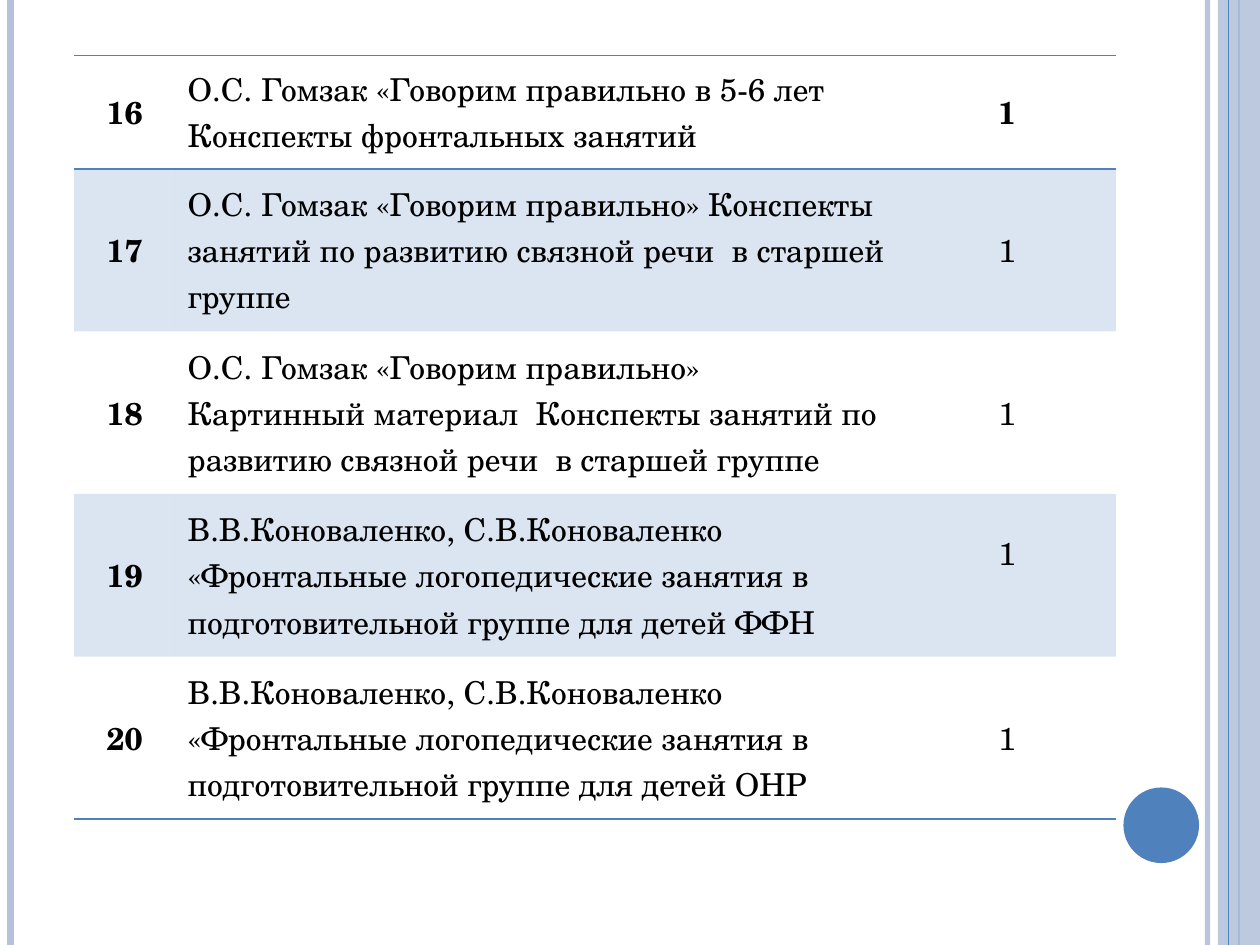
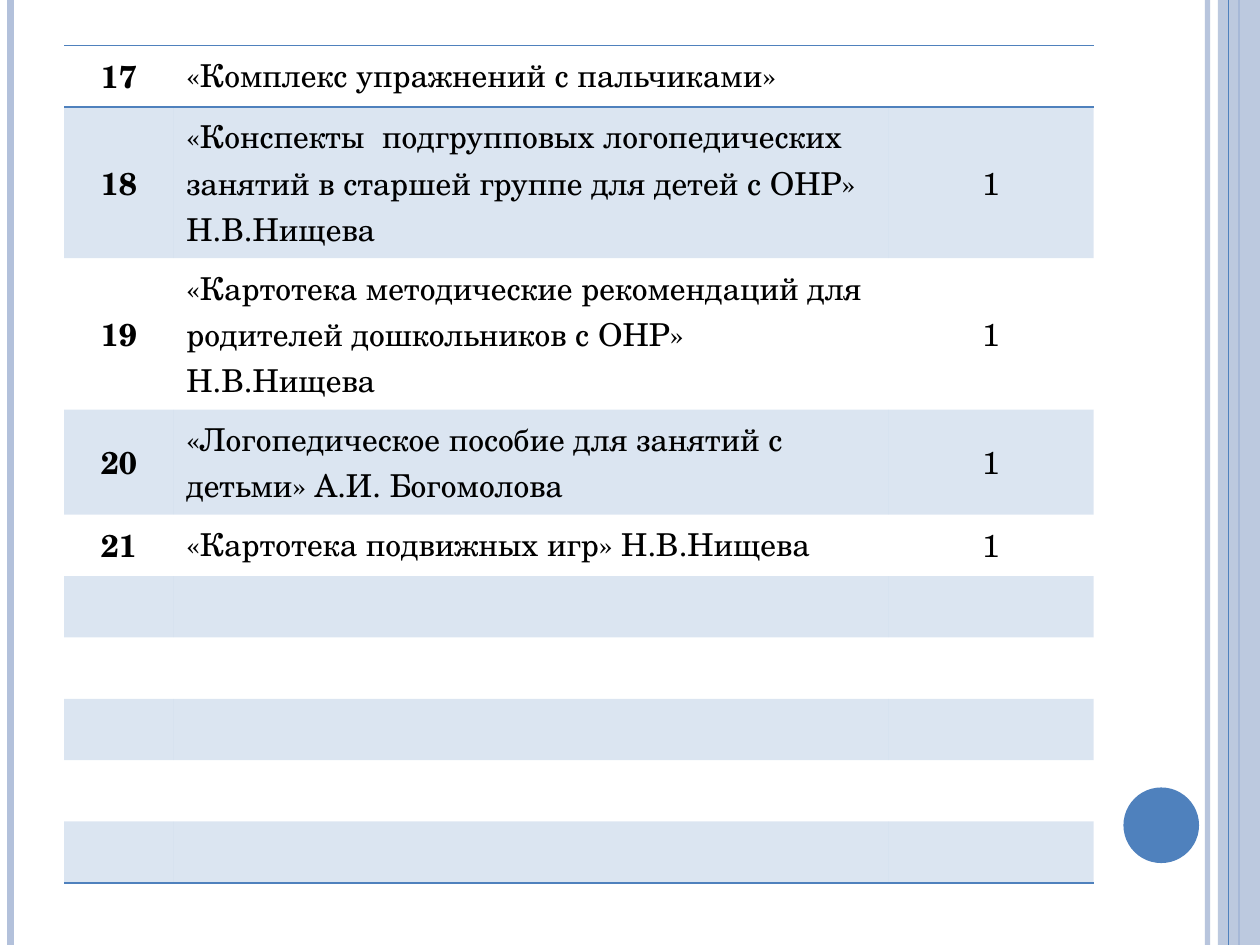
import pptx
import pptx.util
import pptx.dml.color
import pptx.enum.shapes
import pptx.enum.text
import pptx.oxml
import pptx.oxml.ns
import lxml.etree

Pt = pptx.util.Pt
qn = pptx.oxml.ns.qn
MIDDLE = pptx.enum.text.MSO_ANCHOR.MIDDLE
TOP = pptx.enum.text.MSO_ANCHOR.TOP

WIDTH, HEIGHT = 720, 540
ACCENT, PALE, INK = "4F81BD", "B3C1DB", "000000"
FONT, TEXT_SIZE = "TeX Gyre Schola", 18
PLAIN_TABLE = "{2D5ABB26-0587-4C30-8999-92F81FD0307C}"

BOOKS = [
    ("16", "О.С. Гомзак «Говорим правильно в 5-6 лет Конспекты фронтальных занятий", "1"),
    ("17", "О.С. Гомзак «Говорим правильно» Конспекты занятий по развитию связной речи  в старшей группе", "1"),
    ("18", "О.С. Гомзак «Говорим правильно»\vКартинный материал  Конспекты занятий по развитию связной речи  в старшей группе", "1"),
    ("19", "В.В.Коноваленко, С.В.Коноваленко «Фронтальные логопедические занятия в подготовительной группе для детей ФФН", "1"),
    ("20", "В.В.Коноваленко, С.В.Коноваленко «Фронтальные логопедические занятия в подготовительной группе для детей ОНР", "1"),
]
CARD_FILES = [
    ("17", "«Комплекс упражнений с пальчиками»", ""),
    ("18", "«Конспекты  подгрупповых логопедических занятий в старшей группе для детей с ОНР» Н.В.Нищева", "1"),
    ("19", "«Картотека методические рекомендаций для родителей дошкольников с ОНР» Н.В.Нищева", "1"),
    ("20", "«Логопедическое пособие для занятий с детьми» А.И. Богомолова", "1"),
    ("21", "«Картотека подвижных игр» Н.В.Нищева", "1"),
] + [("", "", "")] * 5


def paint(color_format, hex_color, opacity=100):
    color_format.rgb = pptx.dml.color.RGBColor.from_string(hex_color)
    return opacity


def fill_solid(fill, hex_color, opacity=100):
    fill.solid()
    paint(fill.fore_color, hex_color)
    if opacity < 100:
        color = fill._xPr.find(qn("a:solidFill"))[0]
        lxml.etree.SubElement(color, qn("a:alpha")).set("val", str(opacity * 1000))


def add_stripe(shapes, x, weight, hex_color, opacity=100):
    stripe = shapes.add_connector(
        pptx.enum.shapes.MSO_CONNECTOR.STRAIGHT, Pt(x), Pt(0), Pt(x), Pt(HEIGHT))
    stripe.line.width = Pt(weight)
    fill_solid(stripe.line.fill, hex_color, opacity)
    lxml.etree.SubElement(stripe._element.spPr, qn("a:effectLst"))


def add_block(shapes, preset, box, hex_color, opacity=100):
    block = shapes.add_shape(preset, *map(Pt, box))
    block.shadow.inherit = False
    fill_solid(block.fill, hex_color, opacity)
    block.line.fill.background()


def decorate_master(master, slide):
    shapes = slide.shapes
    preset = pptx.enum.shapes.MSO_SHAPE
    add_stripe(shapes, 690, 3, PALE, 93)
    add_stripe(shapes, 6, 4.5, PALE)
    add_stripe(shapes, 708, 1.5, ACCENT)
    add_block(shapes, preset.RECTANGLE, (696, 0, 24, HEIGHT), PALE, 87)
    add_stripe(shapes, 702, 0.75, ACCENT)
    add_block(shapes, preset.OVAL, (642, 450, 43.2, 43.2), ACCENT)
    for number, part in enumerate(list(shapes), 100):
        part._element.xpath(".//p:cNvPr")[0].set("id", str(number))
        master.shapes.element.append(part._element)


def add_rule(cell, side):
    rule = lxml.etree.SubElement(
        cell._tc.get_or_add_tcPr(), qn(f"a:ln{side}"), w=str(Pt(1)))
    color = lxml.etree.SubElement(
        lxml.etree.SubElement(rule, qn("a:solidFill")), qn("a:srgbClr"))
    color.set("val", ACCENT)


def write_cell(cell, text, bold, centered, anchor):
    cell.text = text
    cell.vertical_anchor = anchor
    paragraph = cell.text_frame.paragraphs[0]
    if centered:
        paragraph.alignment = pptx.enum.text.PP_ALIGN.CENTER
    font = paragraph.font
    font.name, font.size, font.bold = FONT, Pt(TEXT_SIZE), bold
    paint(font.color, INK)


def add_book_list(slide, box, columns, heights, entries, title_anchor):
    frame = slide.shapes.add_table(len(entries), len(columns), *map(Pt, box))
    table = frame.table
    table._tbl.tblPr.find(qn("a:tableStyleId")).text = PLAIN_TABLE
    for column, width in zip(table.columns, columns):
        column.width = Pt(width)
    for index, (row, height, entry) in enumerate(zip(table.rows, heights, entries)):
        row.height = Pt(height)
        for part, (cell, text) in enumerate(zip(row.cells, entry)):
            is_title = part == 1
            write_cell(cell, text, part == 0, not is_title,
                       title_anchor if is_title else MIDDLE)
            if index == 0:
                add_rule(cell, "T")
            if index in (0, len(entries) - 1):
                add_rule(cell, "B")
            if index % 2:
                fill_solid(cell.fill, ACCENT, 20)
            else:
                cell.fill.background()
    return table


def build_books(slide):
    table = add_book_list(slide, (42.4, 31.7, 595.4, 436.3), (57.6, 413.3, 124.5),
                          [64.8] + [92.9] * 4, BOOKS, MIDDLE)
    table.cell(0, 2).text_frame.paragraphs[0].font.bold = True
    table.cell(3, 2).margin_bottom = Pt(28.8)


def build_card_files(slide):
    add_book_list(slide, (36.7, 26, 588.2, 471), (62.6, 408.2, 117.4),
                  [34.5, 85, 85, 59.8] + [34.5] * 6, CARD_FILES, TOP)


def main():
    deck = pptx.Presentation()
    deck.slide_width, deck.slide_height = Pt(WIDTH), Pt(HEIGHT)
    blank = deck.slide_layouts[6]
    books = deck.slides.add_slide(blank)
    decorate_master(deck.slide_master, books)
    build_books(books)
    build_card_files(deck.slides.add_slide(blank))
    deck.save("out.pptx")


if __name__ == "__main__":
    main()
